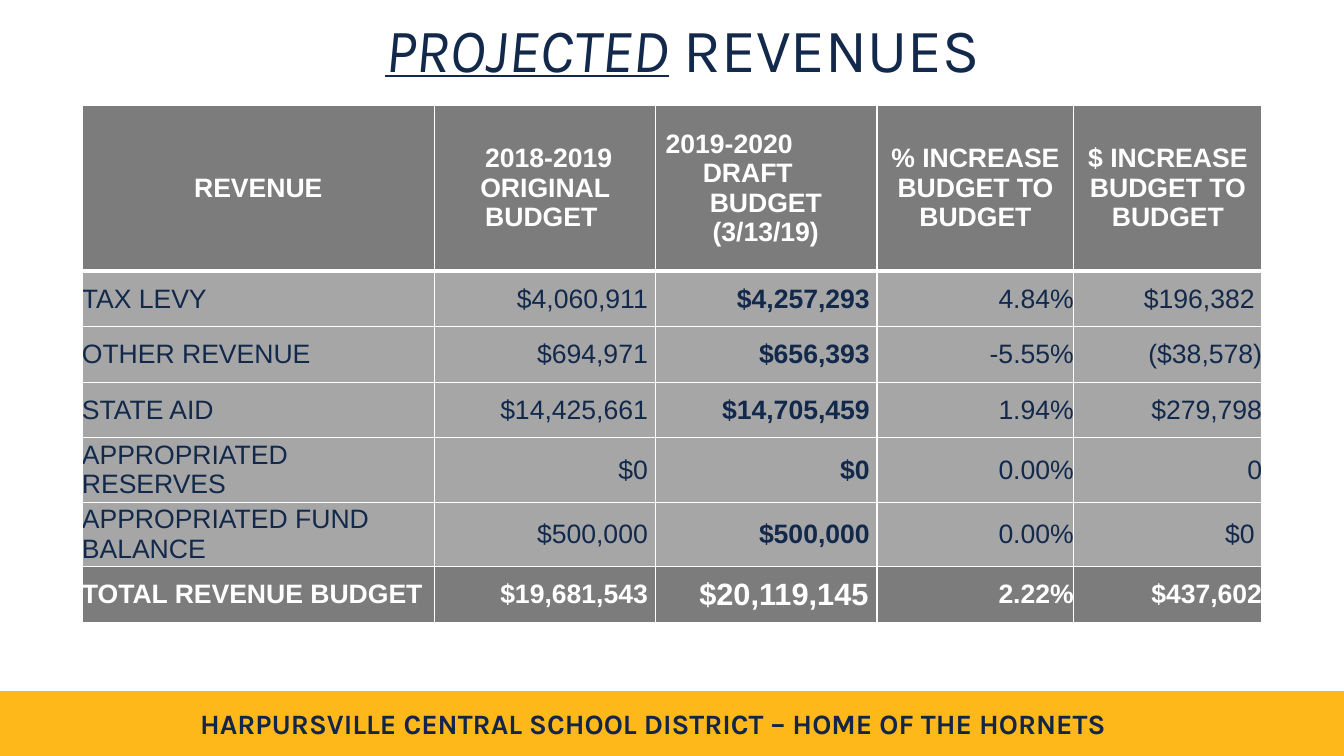
from lxml import etree
from pptx import Presentation
from pptx.dml.color import RGBColor
from pptx.enum import shapes, text
from pptx.oxml import ns
from pptx.util import Pt

NAVY, GOLD, WHITE, DARK, LIGHT = "13294B", "FFB819", "FFFFFF", "7C7C7C", "A6A6A6"
ALIGN = text.PP_ALIGN
COLUMN_WIDTHS = [252, 157.5, 158.5, 140.5, 134.5]
ROW_HEIGHTS = [118.8, 39.6, 39.6, 39.6, 46.1, 46.1, 39.6]
HEADINGS = [
    "REVENUE",
    " 2018-2019 ORIGINAL BUDGET ",
    [("2019-2020", 7.5), ("DRAFT", 34), ("BUDGET", 39), ("(3/13/19)", 41)],
    "% INCREASE BUDGET TO BUDGET",
    "$ INCREASE BUDGET TO BUDGET",
]
REVENUES = [
    ["TAX LEVY", "$4,060,911 ", "$4,257,293 ", "4.84%", "$196,382 "],
    ["OTHER REVENUE", "$694,971 ", "$656,393 ", "-5.55%", "($38,578)"],
    ["STATE AID", "$14,425,661 ", "$14,705,459 ", "1.94%", "$279,798"],
    ["APPROPRIATED RESERVES", "$0 ", "$0 ", "0.00%", "0"],
    ["APPROPRIATED FUND BALANCE", "$500,000 ", "$500,000 ", "0.00%", "$0 "],
    ["TOTAL REVENUE BUDGET", "$19,681,543 ", "$20,119,145 ", "2.22%", "$437,602"],
]


def color(value):
    """Turn a hex string into a colour."""
    return RGBColor.from_string(value)


def add_run(paragraph, words, size, ink, font="Arial", bold=False, italic=False, underline=False):
    """Add one formatted run to a paragraph."""
    run = paragraph.add_run()
    run.text = words
    run.font.name, run.font.size = font, Pt(size)
    run.font.bold, run.font.italic, run.font.underline = bold, italic, underline
    run.font.color.rgb = color(ink)


def set_borders(cell, top, bottom):
    """Draw white borders round a cell, ahead of its fill."""
    properties = cell._tc.get_or_add_tcPr()
    widths = {"lnL": 1, "lnR": 1, "lnT": top, "lnB": bottom}
    for position, (side, width) in enumerate(widths.items()):
        line = etree.Element(ns.qn(f"a:{side}"), w=str(Pt(width)))
        fill = etree.SubElement(line, ns.qn("a:solidFill"))
        etree.SubElement(fill, ns.qn("a:srgbClr"), val=WHITE)
        properties.insert(position, line)


def format_cell(cell, fill, top=1, bottom=1):
    """Give a cell its fill, borders, zero margins and middle anchor."""
    cell.fill.solid()
    cell.fill.fore_color.rgb = color(fill)
    cell.margin_left = cell.margin_right = cell.margin_top = cell.margin_bottom = 0
    cell.vertical_anchor = text.MSO_ANCHOR.MIDDLE
    set_borders(cell, top, bottom)


def fill_heading(cell, heading):
    """Write a centred heading, or one made of indented lines."""
    frame = cell.text_frame
    if isinstance(heading, str):
        frame.paragraphs[0].alignment = ALIGN.CENTER
        add_run(frame.paragraphs[0], heading, 19, WHITE, bold=True)
        return
    for index, (words, indent) in enumerate(heading):
        paragraph = frame.add_paragraph() if index else frame.paragraphs[0]
        paragraph.alignment = ALIGN.LEFT
        paragraph._p.get_or_add_pPr().set("marL", str(Pt(indent)))
        add_run(paragraph, words, 19, WHITE, bold=True)


def add_revenue_table(slide):
    """Add the table of revenues."""
    frame = slide.shapes.add_table(len(ROW_HEIGHTS), len(COLUMN_WIDTHS), Pt(58.5), Pt(75),
                                   Pt(sum(COLUMN_WIDTHS)), Pt(sum(ROW_HEIGHTS)))
    table = frame.table
    table.horz_banding = False
    for column, width in zip(table.columns, COLUMN_WIDTHS):
        column.width = Pt(width)
    for row, height in zip(table.rows, ROW_HEIGHTS):
        row.height = Pt(height)
    for index, heading in enumerate(HEADINGS):
        cell = table.cell(0, index)
        format_cell(cell, DARK, bottom=3)
        fill_heading(cell, heading)
    for row_index, values in enumerate(REVENUES, 1):
        total = row_index == len(REVENUES)
        for index, value in enumerate(values):
            cell = table.cell(row_index, index)
            format_cell(cell, DARK if total else LIGHT, top=3 if row_index == 1 else 1)
            paragraph = cell.text_frame.paragraphs[0]
            paragraph.alignment = ALIGN.RIGHT if index else ALIGN.LEFT
            add_run(paragraph, value, 22 if total and index == 2 else 19,
                    WHITE if total else NAVY, bold=total or index == 2)


def add_title(slide):
    """Place and write the title."""
    title = slide.shapes.title
    title.left, title.top, title.width, title.height = Pt(73.5), Pt(0), Pt(828), Pt(75)
    title.fill.solid()
    title.fill.fore_color.rgb = color(WHITE)
    title.text_frame.vertical_anchor = text.MSO_ANCHOR.MIDDLE
    paragraph = title.text_frame.paragraphs[0]
    paragraph.alignment, paragraph.line_spacing = ALIGN.CENTER, 0.9
    add_run(paragraph, "PROJECTED", 44, NAVY, "Karla", italic=True, underline=True)
    add_run(paragraph, " REVENUES", 44, NAVY, "Karla")


def add_footer(slide):
    """Add the gold band and the district's motto."""
    band = slide.shapes.add_shape(shapes.MSO_SHAPE.RECTANGLE, Pt(0), Pt(494), Pt(960), Pt(45.5))
    band.shadow.inherit = False
    band.fill.solid()
    band.fill.fore_color.rgb = band.line.color.rgb = color(GOLD)
    band.line.width = Pt(1)
    motto = slide.shapes.add_textbox(Pt(126.5), Pt(501), Pt(680), Pt(31.5))
    motto.text_frame.word_wrap = True
    paragraph = motto.text_frame.paragraphs[0]
    paragraph.alignment = ALIGN.CENTER
    add_run(paragraph, "HARPURSVILLE CENTRAL SCHOOL DISTRICT – HOME OF THE HORNETS",
            20, "132649", "Karla", bold=True)


def main():
    """Build and save the slide."""
    presentation = Presentation()
    presentation.slide_width, presentation.slide_height = Pt(960), Pt(540)
    slide = presentation.slides.add_slide(presentation.slide_layouts[5])
    add_footer(slide)
    add_title(slide)
    add_revenue_table(slide)
    presentation.save("out.pptx")


if __name__ == "__main__":
    main()
